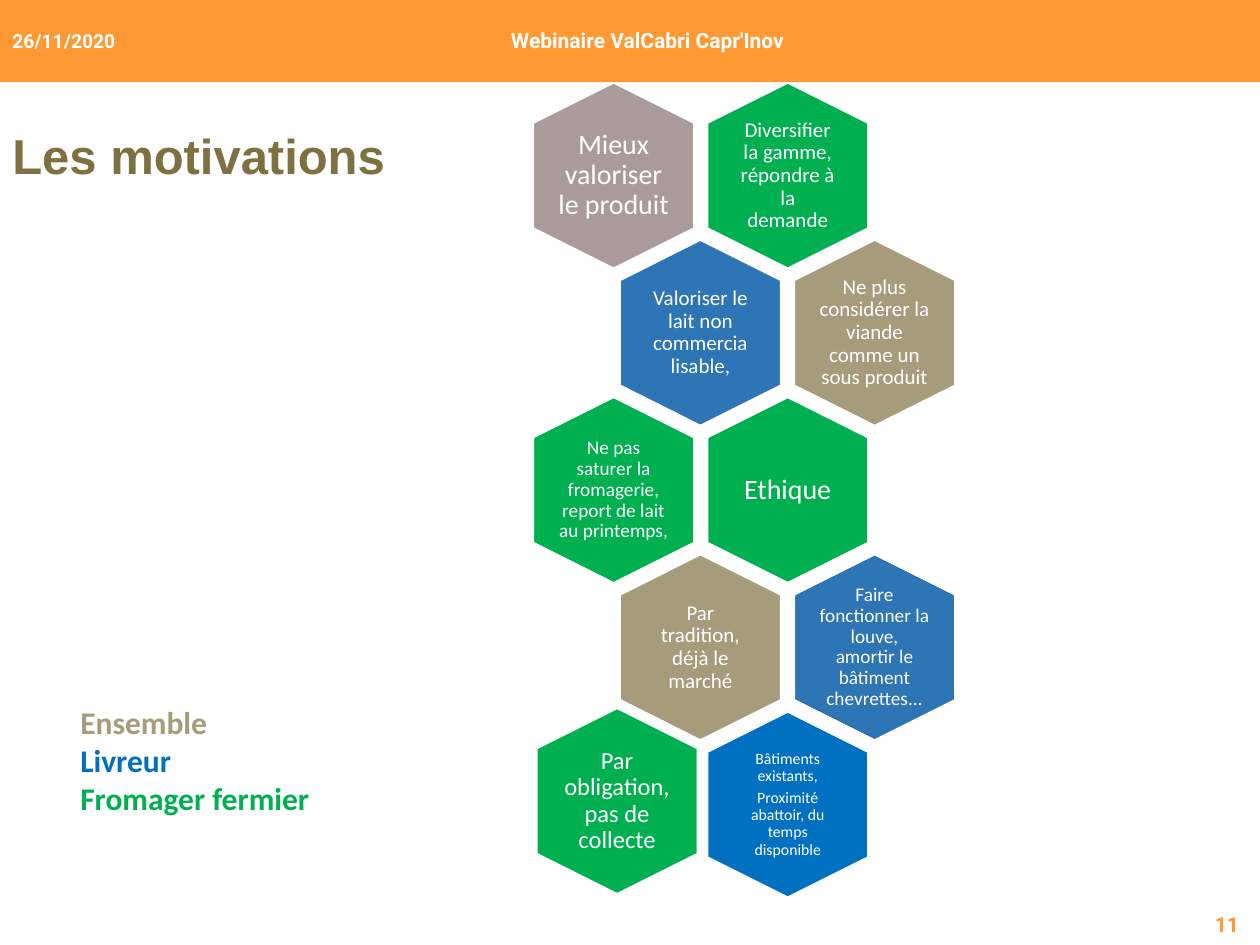
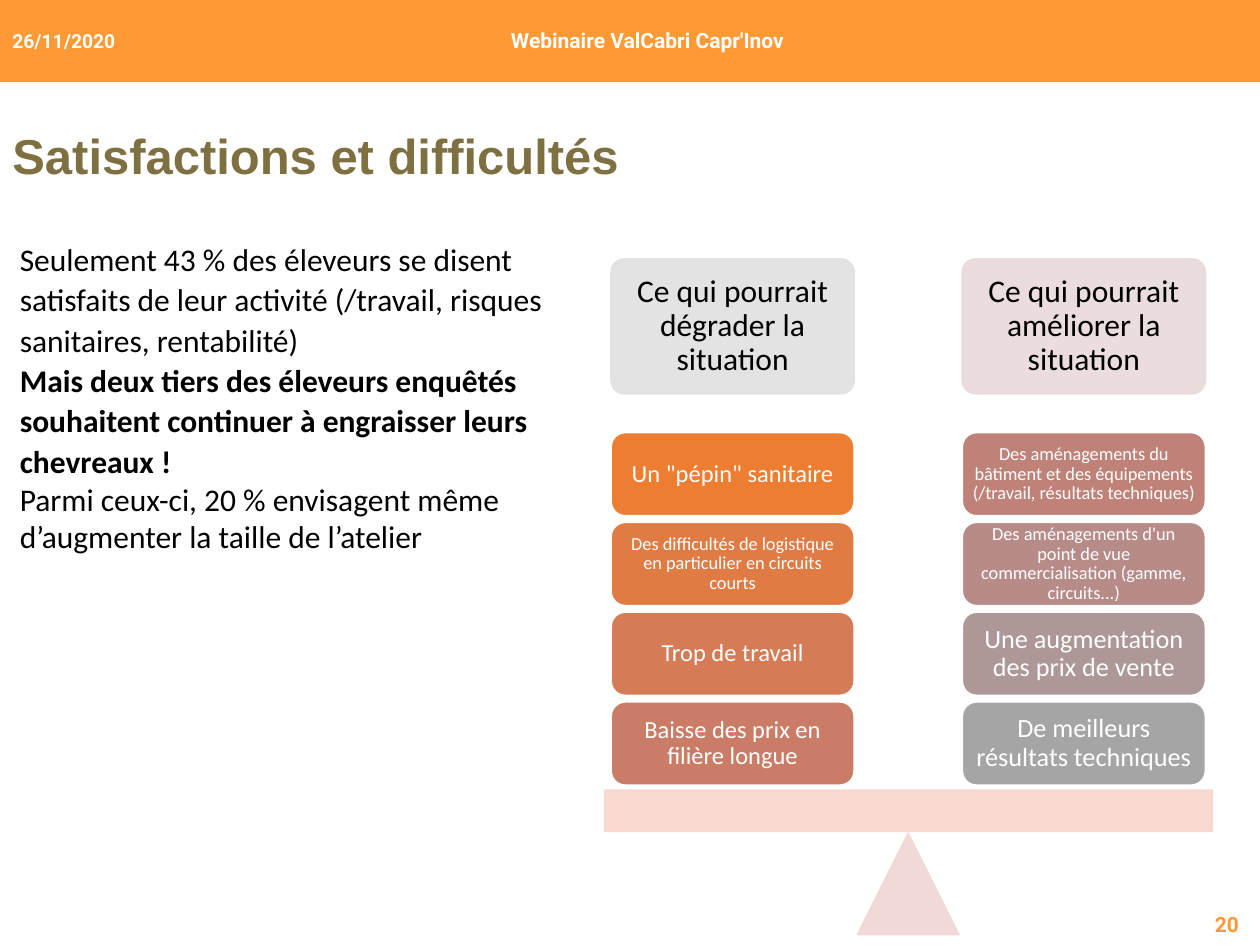
from lxml import etree
from pptx import Presentation
from pptx.dml.color import RGBColor
from pptx.enum.shapes import MSO_SHAPE as SHAPE
from pptx.enum.text import MSO_ANCHOR as ANCHOR, PP_ALIGN as ALIGN
from pptx.oxml.ns import qn
from pptx.util import Cm, Pt

WHITE = RGBColor(0xFF, 0xFF, 0xFF)
BLACK = RGBColor(0x00, 0x00, 0x00)
ORANGE = RGBColor(0xFF, 0x99, 0x33)
OLIVE = RGBColor(0x7F, 0x70, 0x42)
GREEN = RGBColor(0x00, 0xB0, 0x50)
BLUE = RGBColor(0x2E, 0x75, 0xB6)
BRIGHT_BLUE = RGBColor(0x00, 0x70, 0xC0)
SAND = RGBColor(0xA6, 0x9B, 0x7B)
MAUVE = RGBColor(0xAB, 0x9A, 0x9A)
PALE_GREY = RGBColor(0xE1, 0xE1, 0xE1)
PALE_ROSE = RGBColor(0xE9, 0xDA, 0xDA)
BEAM = RGBColor(0xF8, 0xD7, 0xCD)
PIVOT = RGBColor(0xF1, 0xD6, 0xD3)
WORSE = [RGBColor(0xED, 0x7D, 0x31), RGBColor(0xE0, 0x7B, 0x44),
         RGBColor(0xD5, 0x7B, 0x56), RGBColor(0xCA, 0x7C, 0x67)]
BETTER = [RGBColor(0xBF, 0x82, 0x78), RGBColor(0xB6, 0x8B, 0x88),
          RGBColor(0xAD, 0x97, 0x97), RGBColor(0xA5, 0xA5, 0xA5)]

DATE = "26/11/2020"
EVENT = "Webinaire ValCabri Capr'Inov"
BODY_INSETS = (0.25, 0.13)


class Deck:
    body = dict(name="Calibri", size=Pt(18), bold=False)
    title = dict(name="Arial", size=Pt(28), bold=True)
    footer = dict(name="Roboto", size=Pt(12), bold=True)

    def __init__(self):
        self.prs = Presentation()
        self.prs.slide_width, self.prs.slide_height = Cm(25.4), Cm(19.05)
        self.s = None

    def new_slide(self, title, number):
        self.s = self.prs.slides.add_slide(self.prs.slide_layouts[5])
        sp = self.s.shapes.title
        sp.left, sp.top, sp.width, sp.height = Cm(0), Cm(1.35), Cm(25.4), Cm(3.68)
        self.set_text(sp, [(title, OLIVE, {})], self.title, spacing=0.9)
        self.shape(SHAPE.RECTANGLE, (0, 0, 25.4, 1.66), ORANGE)
        self.text((3.48, 0, 19.15, 1.63), [(EVENT, WHITE, {})], self.footer,
                  align=ALIGN.CENTER)
        self.text((24.1, 18.21, 1.27, 0.84), [(str(number), ORANGE, {})],
                  self.footer, align=ALIGN.CENTER)
        self.text((0, 0, 3.48, 1.63), [(DATE, WHITE, dict(size=Pt(11)))], self.footer)

    def set_text(self, sp, paragraphs, style, insets=BODY_INSETS, align=ALIGN.LEFT,
                 anchor=ANCHOR.MIDDLE, spacing=1.0, after=0):
        tf = sp.text_frame
        tf.word_wrap = True
        tf.vertical_anchor = anchor
        tf.margin_left = tf.margin_right = Cm(insets[0])
        tf.margin_top = tf.margin_bottom = Cm(insets[1])
        for i, (text, color, extra) in enumerate(paragraphs):
            p = tf.add_paragraph() if i else tf.paragraphs[0]
            p.alignment, p.line_spacing = align, spacing
            p.space_before, p.space_after = Pt(0), Pt(after)
            r = p.add_run()
            r.text = text
            for key, value in {**style, **extra}.items():
                setattr(r.font, key, value)
            r.font.color.rgb = color

    def text(self, box, paragraphs, style=None, **layout):
        sp = self.s.shapes.add_textbox(*map(Cm, box))
        self.set_text(sp, paragraphs, style or self.body, **layout)
        return sp

    def shape(self, kind, box, fill, line=None, opacity=None):
        sp = self.s.shapes.add_shape(kind, *map(Cm, box))
        sp.shadow.inherit = False
        sp.fill.solid()
        sp.fill.fore_color.rgb = fill
        if line is None:
            sp.line.fill.background()
        else:
            sp.line.color.rgb = line
            sp.line.width = Pt(1)
        if opacity:
            for clr in list(sp.element.iter(qn("a:srgbClr"))):
                etree.SubElement(clr, qn("a:alpha")).set("val", str(opacity * 1000))
        return sp

    def label(self, sp, lines, size, color, inset):
        self.set_text(sp, [(line, color, {}) for line in lines],
                      {**self.body, "size": Pt(size)}, insets=(inset, inset),
                      align=ALIGN.CENTER, spacing=0.9, after=round(size * 0.35, 1))

    def hexagon(self, x, y, lines, size, fill, inset):
        sp = self.shape(SHAPE.HEXAGON, (x - 1.87, y - 1.62, 3.74, 3.24), fill, WHITE)
        sp.rotation = 90
        box = self.s.shapes.add_textbox(Cm(x - 1.12), Cm(y - 1.28), Cm(2.24), Cm(2.56))
        self.label(box, lines, size, WHITE, inset)

    def card(self, box, text, size, fill, color=WHITE, inset=0.15, line=WHITE,
             opacity=None, radius=0.17):
        sp = self.shape(SHAPE.ROUNDED_RECTANGLE, box, fill, line, opacity)
        sp.adjustments[0] = radius
        self.label(sp, [text], size, color, inset)


def motivations(deck):
    deck.new_slide("Les motivations", 11)
    rows = [
        [(["Mieux valoriser le produit"], 16, MAUVE, 0),
         (["Diversifier la gamme, répondre à la demande"], 12, GREEN, 0.12)],
        [(["Valoriser le lait non commercialisable,"], 12, BLUE, 0.12),
         (["Ne plus considérer la viande comme un sous produit"], 12, SAND, 0)],
        [(["Ne pas saturer la fromagerie, report de lait au printemps,"], 11, GREEN, 0),
         (["Ethique"], 16, GREEN, 0.17)],
        [(["Par tradition, déjà le marché"], 12, SAND, 0.12),
         (["Faire fonctionner la louve, amortir le bâtiment chevrettes..."], 11, BLUE, 0)],
        [(["Par obligation, pas de collecte"], 14, GREEN, 0),
         (["Bâtiments existants,", "Proximité abattoir, du temps disponible"],
          9, BRIGHT_BLUE, 0.1)],
    ]
    nudges = {(4, 0): (0.07, -0.07)}
    for i, row in enumerate(rows):
        for j, (lines, size, fill, inset) in enumerate(row):
            dx, dy = nudges.get((i, j), (0, 0))
            x = 12.37 + 3.51 * j + 1.75 * (i % 2) + dx
            deck.hexagon(x, 3.54 + 3.17 * i + dy, lines, size, fill, inset)
    legend = [("Ensemble", SAND), ("Livreur", BRIGHT_BLUE), ("Fromager fermier", GREEN)]
    deck.text((1.37, 14.05, 6.4, 3.33),
              [(name, color, dict(bold=True)) for name, color in legend],
              anchor=ANCHOR.TOP)


def satisfactions(deck):
    deck.new_slide("Satisfactions et difficultés", 20)
    columns = [
        (12.32, "Ce qui pourrait dégrader la situation", PALE_GREY, WORSE, [
            ("Un \"pépin\" sanitaire", 14),
            ("Des difficultés de logistique en particulier en circuits courts", 10.5),
            ("Trop de travail", 14),
            ("Baisse des prix en filière longue", 14)]),
        (19.4, "Ce qui pourrait améliorer la situation", PALE_ROSE, BETTER, [
            ("Des aménagements du bâtiment et des équipements "
             "(/travail, résultats techniques)", 10.5),
            ("Des aménagements d'un point de vue commercialisation "
             "(gamme, circuits...)", 10.5),
            ("Une augmentation des prix de vente", 15),
            ("De meilleurs résultats techniques", 15)]),
    ]
    deck.shape(SHAPE.ISOSCELES_TRIANGLE, (17.29, 16.8, 2.04, 2.04), PIVOT, PIVOT, 90)
    deck.shape(SHAPE.RECTANGLE, (12.19, 15.93, 12.25, 0.83), BEAM, BEAM, 90)
    for x, heading, pale, fills, reasons in columns:
        deck.card((x, 5.22, 4.9, 2.72), heading, 18, pale, BLACK, 0.18, pale, 90, 0.1)
        for i, ((reason, size), fill) in enumerate(zip(reasons, fills)):
            inset = 0.11 if size < 14 else 0.15
            deck.card((x, 8.72 + 1.81 * i, 4.9, 1.68), reason, size, fill, inset=inset)
    findings = [
        ("Seulement 43 % des éleveurs se disent satisfaits de leur activité "
         "(/travail, risques sanitaires, rentabilité)", BLACK, {}),
        ("Mais deux tiers des éleveurs enquêtés souhaitent continuer à engraisser "
         "leurs chevreaux !", BLACK, dict(bold=True)),
        ("Parmi ceux-ci, 20 % envisagent même d’augmenter la taille de l’atelier",
         BLACK, {}),
    ]
    sp = deck.text((0.15, 4.65, 11.56, 6.73), findings, anchor=ANCHOR.TOP, spacing=1.07)
    sp.text_frame.paragraphs[-1].line_spacing = 1.0


def main():
    deck = Deck()
    motivations(deck)
    satisfactions(deck)
    deck.prs.save("out.pptx")


if __name__ == "__main__":
    main()
